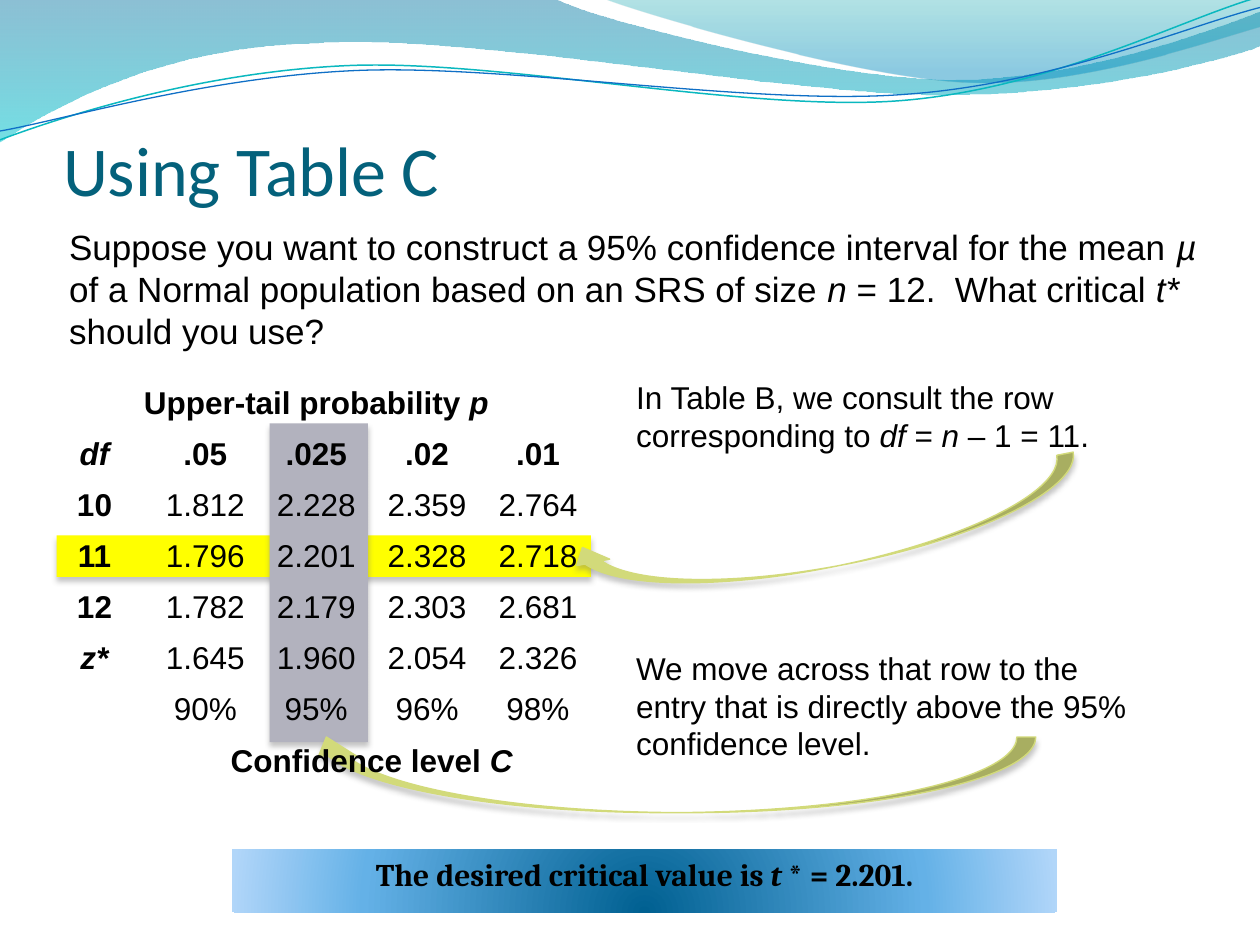
from math import cos, radians, sin

from lxml import etree
from pptx import Presentation
from pptx.dml.color import RGBColor
from pptx.enum import shapes, text
from pptx.oxml import parse_xml
from pptx.oxml.ns import nsdecls, qn
from pptx.util import Inches, Pt

BLACK = RGBColor(0x00, 0x00, 0x00)
TITLE_BLUE = RGBColor(0x04, 0x61, 0x7B)
TEAL = RGBColor(0x0A, 0xB8, 0xBF)
BLUE = RGBColor(0x0F, 0x6F, 0xC6)
YELLOW = RGBColor(0xFF, 0xFF, 0x00)
GRAY = RGBColor(0xB2, 0xB2, 0xBE)
OLIVE = RGBColor(0xD2, 0xDA, 0x7A)
NO_TABLE_STYLE = "{2D5ABB26-0587-4C30-8999-92F81FD0307C}"
TILT = 2.7


def write(frame, marked, size=18, name="Arial", color=BLACK, bold=False, align=None):
    """Write one paragraph; every second part between bars is italic."""
    paragraph = frame.paragraphs[0]
    paragraph.alignment = align
    for index, part in enumerate(marked.split("|")):
        if part:
            run = paragraph.add_run()
            run.text = part
            font = run.font
            font.size, font.name, font.bold = Pt(size), name, bold
            font.italic = index % 2 == 1
            font.color.rgb = color


def set_gradient(shape, stops, shade):
    """Fill with (position %, colour, opacity %) stops and a shade element."""
    shape.fill.gradient()
    gradient = shape._element.spPr.find(qn("a:gradFill"))
    for child in list(gradient):
        gradient.remove(child)
    stop_list = etree.SubElement(gradient, qn("a:gsLst"))
    for position, color, opacity in stops:
        stop = etree.SubElement(stop_list, qn("a:gs"), pos=str(position * 1000))
        stop_color = etree.SubElement(stop, qn("a:srgbClr"), val=color)
        if opacity < 100:
            etree.SubElement(stop_color, qn("a:alpha"), val=str(opacity * 1000))
    gradient.append(parse_xml(shade))


presentation = Presentation()
presentation.slide_width, presentation.slide_height = Inches(10), Inches(7.5)
slide = presentation.slides.add_slide(presentation.slide_layouts[5])

# Waves: start point, then line ends (2 numbers) or Bezier segments (6 numbers);
# the two lines are tilted about a pivot
waves = [
    ([(0, 0), (4.4, -0.01), (4.76, 0.17, 6.64, 0.63, 7.58, 0.63),
      (8.53, 0.63, 9.58, 0.26, 10, 0.09), (10.01, 0.36),
      (9.83, 0.44, 8.7, 0.76, 7.46, 0.75), (6.22, 0.75, 3.82, 0.28, 2.57, 0.34),
      (1.29, 0.36, 0.46, 0.83, -0.01, 1.13), (0, 0)],
     [(0, "0074A1", 45), (100, "00C6CF", 55)], None, 0, None),
    ([(4.79, -0.01), (5.09, 0.11, 6.82, 0.62, 7.69, 0.65),
      (8.56, 0.69, 9.61, 0.32, 10, 0.21), (10, 0), (4.79, -0.01)],
     [(0, "00A1A9", 30), (80, "008BBF", 45)], None, 0, None),
    ([(0, 1.11), (0.48, 0.93, 1.58, 0.57, 2.77, 0.52),
      (3.95, 0.47, 5.93, 0.89, 7.13, 0.8), (8.33, 0.71, 9.38, 0.15, 9.98, -0.02)],
     None, TEAL, 0.85, (4.99, 0.58)),
    ([(0, 1.04), (0.47, 0.96, 1.64, 0.61, 2.83, 0.56),
      (4.03, 0.51, 5.97, 0.84, 7.17, 0.75), (8.36, 0.67, 9.41, 0.21, 10, 0.06)],
     None, BLUE, 0.75, (5, 0.59)),
]
for segments, stops, line_color, line_width, pivot in waves:
    points = [segment[i:i + 2] for segment in segments for i in range(0, len(segment), 2)]
    if pivot:
        cosine, sine = cos(radians(TILT)), sin(radians(TILT))
        offsets = [(x - pivot[0], y - pivot[1]) for x, y in points]
        points = [(pivot[0] + x * cosine - y * sine, pivot[1] + x * sine + y * cosine)
                  for x, y in offsets]
    points = [(Inches(x), Inches(y)) for x, y in points]
    builder = slide.shapes.build_freeform(*points[0])
    builder.add_line_segments(points[1:], close=stops is not None)
    wave = builder.convert_to_shape()
    # Join each three points of a Bezier segment into one curve
    steps = iter(list(wave._element.iter(qn("a:lnTo"))))
    for segment in segments[1:]:
        first = next(steps)
        if len(segment) == 6:
            first.tag = qn("a:cubicBezTo")
            for _ in range(2):
                extra = next(steps)
                first.append(extra[0])
                extra.getparent().remove(extra)
    wave.shadow.inherit = False
    if stops:
        set_gradient(wave, stops, f'<a:lin {nsdecls("a")} ang="5400000" scaled="0"/>')
        wave.line.fill.background()
    else:
        wave.rotation = 360 - TILT
        wave.fill.background()
        wave.line.color.rgb = line_color
        wave.line.width = Pt(line_width)

# Title
title = slide.shapes.title
title.left, title.top = Inches(0.5), Inches(0.34)
title.width, title.height = Inches(8.5), Inches(1.33)
frame = title.text_frame
frame.vertical_anchor = text.MSO_ANCHOR.BOTTOM
frame.margin_left = frame.margin_right = frame.margin_bottom = 0
frame.margin_top = Inches(0.05)
write(frame, "Using Table C", 40, "Calibri", TITLE_BLUE, align=text.PP_ALIGN.LEFT)

# Question and explanations
for left, top, width, height, size, words in [
    (0.45, 1.74, 9.25, 2.51, 20,
     "Suppose you want to construct a 95% confidence interval for the mean |µ| of a "
     "Normal population based on an SRS of size |n| = 12.  What critical |t*| "
     "should you use?"),
    (4.95, 2.95, 4.19, 0.71, 18,
     "In Table B, we consult the row corresponding to |df| = |n| – 1 = 11."),
    (4.95, 5.1, 4.19, 1.01, 18,
     "We move across that row to the entry that is directly above the 95% "
     "confidence level."),
]:
    box = slide.shapes.add_textbox(Inches(left), Inches(top), Inches(width), Inches(height))
    box.text_frame.word_wrap = True
    write(box.text_frame, words, size)

# Answer bar
RECTANGLE = shapes.MSO_SHAPE.RECTANGLE
bar = slide.shapes.add_shape(RECTANGLE, Inches(1.84), Inches(6.74),
                             Inches(6.55), Inches(0.5))
set_gradient(bar, [(0, "006091", 100), (68, "64B1E7", 100), (100, "B1D6F9", 100)],
             f'<a:path {nsdecls("a")} path="circle">'
             '<a:fillToRect l="50000" t="130000" r="50000" b="-30000"/></a:path>')
bar.line.fill.background()
bar.shadow.inherit = False
bar.text_frame.word_wrap = True
bar.text_frame.vertical_anchor = text.MSO_ANCHOR.TOP
write(bar.text_frame, "The desired critical value is |t |* = 2.201.",
      name="Cambria", bold=True, align=text.PP_ALIGN.CENTER)

# Row and column highlights with their arrows, each with a soft shadow below
ARROW = shapes.MSO_SHAPE.CURVED_LEFT_ARROW
for kind, left, top, width, height, rotation, color in [
    (RECTANGLE, 0.45, 4.25, 4.24, 0.33, 0, YELLOW),
    (ARROW, 6.29, 2.19, 0.53, 4.1, 79, OLIVE),
    (RECTANGLE, 2.14, 3.36, 0.78, 2.53, 0, GRAY),
    (ARROW, 5.03, 3.26, 0.6, 5.78, 90, OLIVE),
]:
    shape = slide.shapes.add_shape(kind, Inches(left), Inches(top),
                                   Inches(width), Inches(height))
    shape.rotation = rotation
    shape.fill.solid()
    shape.fill.fore_color.rgb = color
    if kind == ARROW:
        shape.line.color.rgb = color
        shape.line.width = Pt(0.79)
    else:
        shape.line.fill.background()
    shape.shadow.inherit = False
    effects = shape._element.spPr.find(qn("a:effectLst"))
    shadow = etree.SubElement(effects, qn("a:outerShdw"), blurRad=str(Pt(3)),
                              dist=str(Pt(2.4)), dir="5400000", rotWithShape="0")
    shadow_color = etree.SubElement(shadow, qn("a:srgbClr"), val="808080")
    etree.SubElement(shadow_color, qn("a:alpha"), val="45000")

# Table of critical values
rows = [
    ["Upper-tail probability |p", "", "", "", ""],
    ["|df", ".05", ".025", ".02", ".01"],
    ["10", "1.812", "2.228", "2.359", "2.764"],
    ["11", "1.796", "2.201", "2.328", "2.718"],
    ["12", "1.782", "2.179", "2.303", "2.681"],
    ["|z*", "1.645", "1.960", "2.054", "2.326"],
    ["", "90%", "95%", "96%", "98%"],
    ["", "Confidence level |C", "", "", ""],
]
table = slide.shapes.add_table(len(rows), 5, Inches(0.31), Inches(3.01),
                               Inches(4.4), Inches(3.25)).table
table.first_row = table.horz_banding = False
table._tbl.tblPr.find(qn("a:tableStyleId")).text = NO_TABLE_STYLE
table.cell(0, 0).merge(table.cell(0, 4))
table.cell(7, 1).merge(table.cell(7, 4))
for row, values in enumerate(rows):
    for column, value in enumerate(values):
        cell = table.cell(row, column)
        cell.fill.background()
        write(cell.text_frame, value, bold=row in (0, 1, 7) or column == 0,
              align=text.PP_ALIGN.CENTER)

presentation.save("out.pptx")
